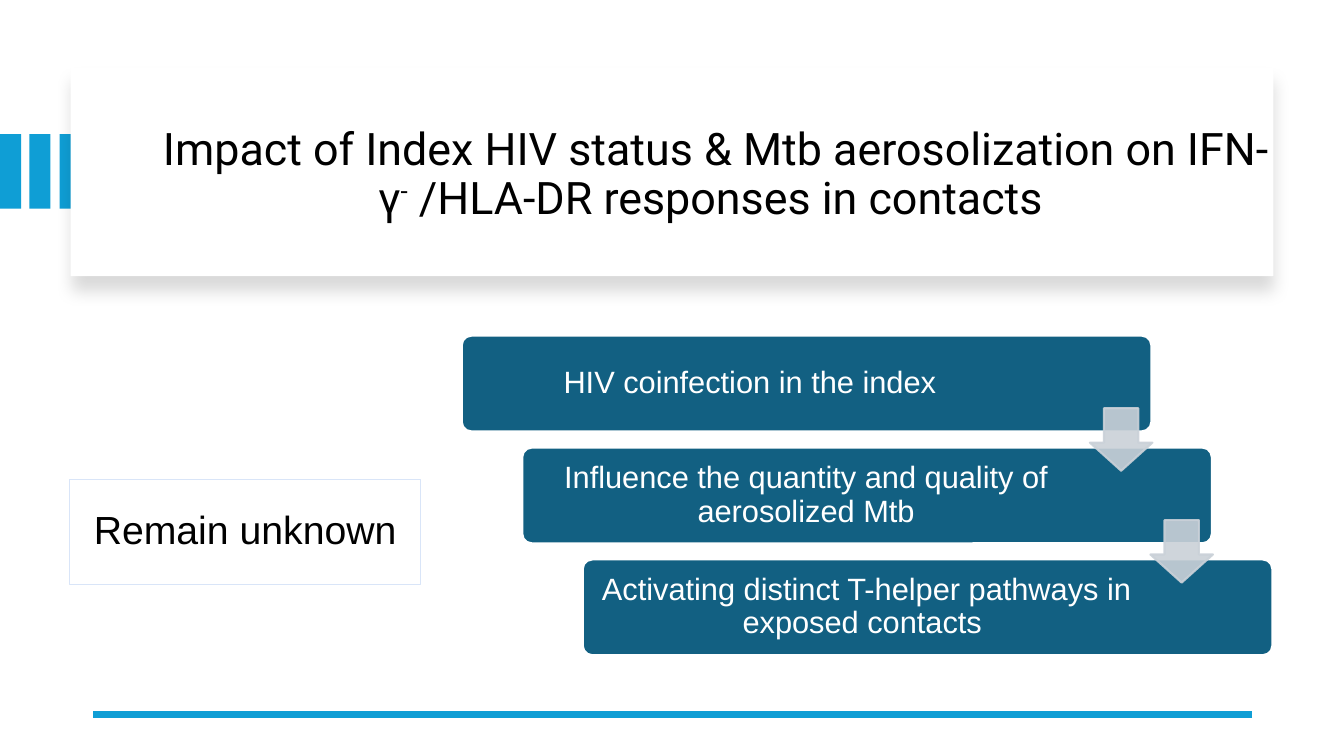
from pptx import Presentation
from pptx import util as u
from pptx.dml.color import RGBColor
from pptx.enum import shapes, text
from pptx.oxml import parse_xml
from pptx.oxml.ns import nsdecls, qn

BLACK = RGBColor(0x00, 0x00, 0x00)
WHITE = RGBColor(0xFF, 0xFF, 0xFF)
SKY = RGBColor(0x0F, 0x9E, 0xD5)
TEAL = RGBColor(0x12, 0x60, 0x82)
GREY = RGBColor(0xCA, 0xD1, 0xD8)
PALE = RGBColor(0xD9, 0xE5, 0xF8)
EMU_PER_PX = 9144  # 100 px to the inch


def px(length):
    return u.Emu(length * EMU_PER_PX)


def write(box, *spans, size, color, font="Arial", inset=9):
    """Fill a box with one centred paragraph; a span is (words, baseline)."""
    frame = box.text_frame
    frame.word_wrap = True
    frame.auto_size = text.MSO_AUTO_SIZE.NONE
    frame.vertical_anchor = text.MSO_ANCHOR.MIDDLE
    frame.margin_left = frame.margin_right = px(inset)
    frame.margin_top = frame.margin_bottom = px(5)
    para = frame.paragraphs[0]
    para.alignment = text.PP_ALIGN.CENTER
    para.line_spacing = 0.9
    para.space_before = u.Pt(0)
    for words, baseline in spans:
        span = para.add_run()
        span.text = words
        span.font.size = u.Pt(size)
        span.font.name = font
        span.font.color.rgb = color
        if baseline:
            span.font._element.set("baseline", str(baseline * 1000))


class Page:
    def __init__(self, deck):
        self.slide = deck.slides.add_slide(deck.slide_layouts[5])
        self.items = self.slide.shapes

    def shape(self, kind, x, y, width, height, fill=None, line=None,
              weight=1.5, adjust=(), opacity=100):
        box = self.items.add_shape(kind, px(x), px(y), px(width), px(height))
        box.shadow.inherit = False
        for index, value in enumerate(adjust):
            box.adjustments[index] = value
        if fill is None:
            box.fill.background()
        else:
            box.fill.solid()
            box.fill.fore_color.rgb = fill
        if line is None:
            box.line.fill.background()
        else:
            box.line.color.rgb = line
            box.line.width = u.Pt(weight)
        if opacity < 100:
            for color in box._element.spPr.iter(qn("a:srgbClr")):
                color.append(parse_xml(
                    f'<a:alpha {nsdecls("a")} val="{opacity * 1000}"/>'))
        return box

    def cast_shadow(self, box, blur, distance, opacity):
        effects = box._element.spPr.find(qn("a:effectLst"))
        effects.append(parse_xml(
            f'<a:outerShdw {nsdecls("a")} blurRad="{u.Pt(blur)}" '
            f'dist="{u.Pt(distance)}" dir="5400000" algn="t" rotWithShape="0">'
            f'<a:srgbClr val="{BLACK}"><a:alpha val="{opacity * 1000}"/>'
            '</a:srgbClr></a:outerShdw>'))

    def title(self, x, y, width, height, *spans, **style):
        box = self.items.title
        box.left, box.top, box.width, box.height = map(px, (x, y, width, height))
        write(box, *spans, **style)
        self.items._spTree.append(box._element)  # in front of the panel

    def label(self, x, y, width, height, words, **style):
        box = self.items.add_textbox(px(x), px(y), px(width), px(height))
        write(box, (words, 0), **style)

    def rule(self, x1, y1, x2, y2, color, weight):
        line = self.items.add_connector(
            shapes.MSO_CONNECTOR.STRAIGHT, px(x1), px(y1), px(x2), px(y2))
        line.line.color.rgb = color
        line.line.width = u.Pt(weight)
        line._element.spPr.append(parse_xml(f'<a:effectLst {nsdecls("a")}/>'))


def main():
    deck = Presentation()
    deck.slide_width, deck.slide_height = px(1333), px(750)
    page = Page(deck)
    kinds = shapes.MSO_SHAPE

    # Stripes at the left edge
    for index in range(3):
        page.shape(kinds.RECTANGLE, index * 59 // 2, 133, 21, 74, fill=SKY)

    # Title on its raised panel
    panel = page.shape(kinds.RECTANGLE, 70, 67, 1193, 207, fill=WHITE)
    page.cast_shadow(panel, blur=11, distance=10, opacity=15)
    page.title(114, 89, 1193, 170,
               ("Impact of Index HIV status & Mtb aerosolization on IFN-γ", 0),
               ("-", 30), (" /HLA-DR responses in contacts ", 0),
               size=32, color=BLACK, font="Roboto", inset=10)

    # Side note and bottom rule
    note = page.shape(kinds.RECTANGLE, 69, 476, 348, 104, line=PALE, weight=0.75)
    write(note, ("Remain unknown", 0), size=28, color=BLACK, inset=10)
    page.rule(1242, 709, 92, 709, SKY, 4.5)

    # Staircase of steps
    steps = [("HIV coinfection in the index ", 574),
             ("Influence the quantity and quality of aerosolized Mtb", 557),
             ("Activating distinct T-helper pathways in exposed contacts ", 557)]
    left, top, step_x, step_y = 458, 333, 60, 111
    for index, (words, width) in enumerate(steps):
        x, y = left + index * step_x, top + index * step_y
        page.shape(kinds.ROUNDED_RECTANGLE, x, y, 684, 95,
                   fill=TEAL, line=WHITE, adjust=[0.1])
        page.label(x + 3, y + 3, width, 89, words, size=22, color=WHITE)

    # Arrows from each step to the next
    for index in range(len(steps) - 1):
        page.shape(kinds.DOWN_ARROW, left + 623 + index * step_x,
                   top + 72 + index * step_y, 62, 62, fill=GREY, line=GREY,
                   adjust=[0.55, 0.45], opacity=90)

    deck.save("out.pptx")


if __name__ == "__main__":
    main()
